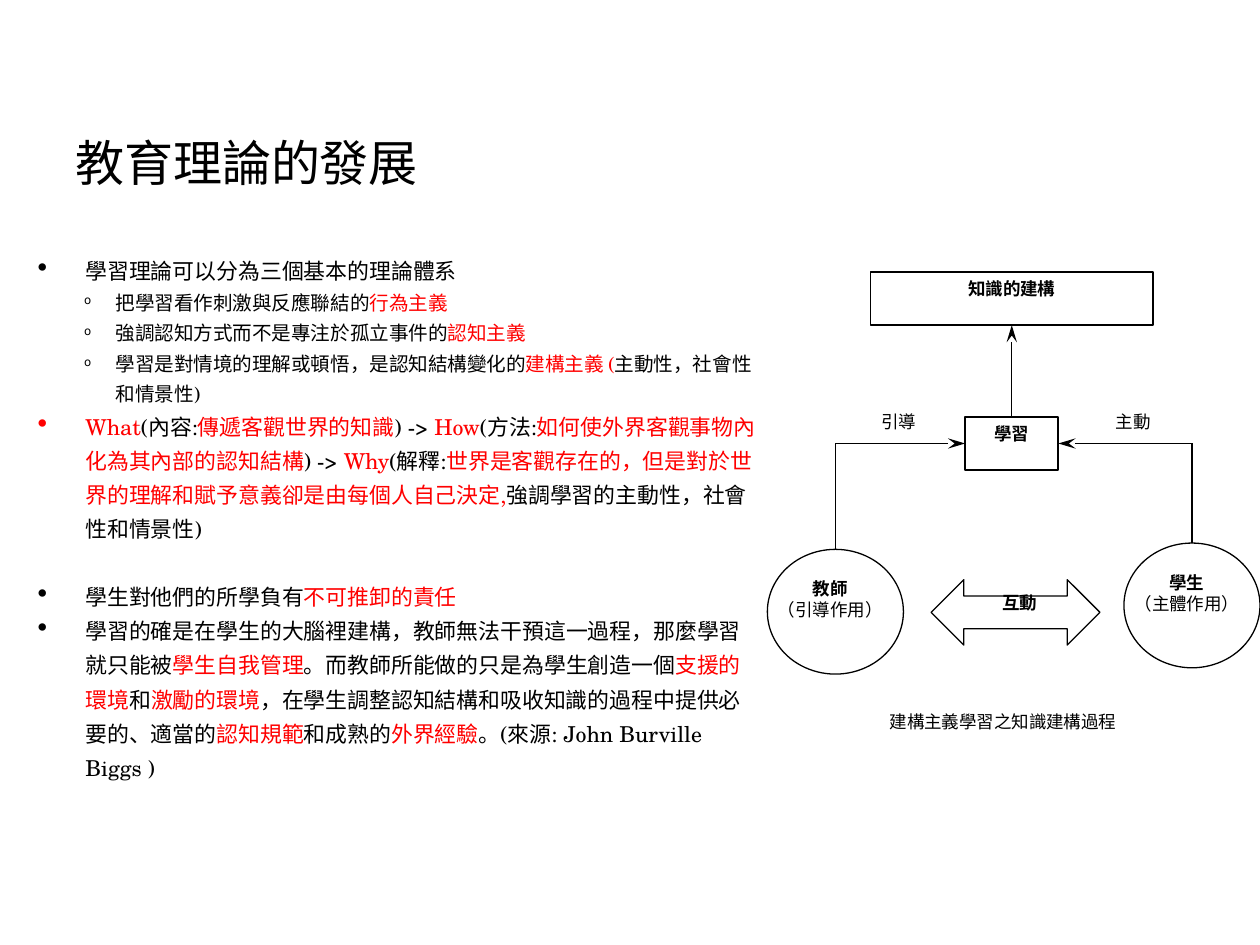
from dataclasses import dataclass

from lxml.etree import SubElement
from pptx import Presentation
from pptx.dml.color import RGBColor
from pptx.enum.shapes import MSO_CONNECTOR, MSO_SHAPE
from pptx.enum.text import MSO_ANCHOR, PP_ALIGN
from pptx.oxml.ns import qn
from pptx.util import Emu, Inches, Pt

COLORS = {"text": "000000", "accent": "FF0000", "fill": "FFFFFF", "line": "000000"}
BODY_FONT, DIAGRAM_FONT = "TeX Gyre Schola", "Calibri"
TOP, LEFT, BOTTOM, RIGHT = range(4)

# Bullet levels: size, left margin, hanging indent, bullet, bullet size
LEVELS = [
    (12.5, 0.38, 0.38, "•", "130000"),
    (11.2, 0.62, 0.25, "o", "60000"),
]

# Level, text (parts between bars are highlighted), space before in points
BULLETS = [
    (0, "學習理論可以分為三個基本的理論體系", 0),
    (1, "把學習看作刺激與反應聯結的|行為主義", 0),
    (1, "強調認知方式而不是專注於孤立事件的|認知主義", 0),
    (1, "學習是對情境的理解或頓悟，是認知結構變化的|建構主義 (|主動性，社會性和情景性)", 0),
    (0, "|What|(內容:|傳遞客觀世界的知識|) -> |How|(方法:|"
        "如何使外界客觀事物內化為其內部的認知結構|) -> |Why|(解釋:|"
        "世界是客觀存在的，但是對於世界的理解和賦予意義卻是由每個人自己決定,|"
        "強調學習的主動性，社會性和情景性)", 0),
    (0, "學生對他們的所學負有|不可推卸的責任", 19.5),
    (0, "學習的確是在學生的大腦裡建構，教師無法干預這一過程，那麼學習就只能被|"
        "學生自我管理|。而教師所能做的只是為學生創造一個|支援的環境|和|激勵的環境|"
        "，在學生調整認知結構和吸收知識的過程中提供必要的、適當的|認知規範|"
        "和成熟的|外界經驗|。(來源: John Burville Biggs )", 0),
]


@dataclass
class Grid:
    """A region of the slide divided into columns and rows."""
    left: int
    top: int
    width: int
    height: int
    columns: int
    rows: int

    def point(self, column, row):
        return (Emu(round(self.left + self.width * column / self.columns)),
                Emu(round(self.top + self.height * row / self.rows)))

    def box(self, column, row, wide, high):
        return (*self.point(column, row),
                Emu(round(self.width * wide / self.columns)),
                Emu(round(self.height * high / self.rows)))


def color(name):
    return RGBColor.from_string(COLORS[name])


def add_run(paragraph, text, font, size, color_name="text", bold=False):
    run = paragraph.add_run()
    run.text = text
    run.font.name, run.font.size, run.font.bold = font, Pt(size), bold
    run.font.color.rgb = color(color_name)


def add_textbox(slide, box, inset=True):
    frame = slide.shapes.add_textbox(*box).text_frame
    frame.word_wrap = True
    if not inset:
        frame.margin_left = frame.margin_right = frame.margin_top = frame.margin_bottom = 0
    return frame


def write_centered(frame, *lines):
    """Write (text, bold) lines, one paragraph each."""
    frame.vertical_anchor = MSO_ANCHOR.TOP
    for index, (text, bold) in enumerate(lines):
        paragraph = frame.add_paragraph() if index else frame.paragraphs[0]
        paragraph.alignment = PP_ALIGN.CENTER
        add_run(paragraph, text, DIAGRAM_FONT, 10, bold=bold)


def add_outlined(slide, kind, box, weight=0.75):
    shape = slide.shapes.add_shape(kind, *box)
    shape.shadow.inherit = False
    shape.fill.solid()
    shape.fill.fore_color.rgb = color("fill")
    shape.line.color.rgb = color("line")
    shape.line.width = Pt(weight)
    return shape


def add_line(slide, start, end, begin=None, finish=None, arrow=False):
    """Draw a line; begin and finish are optional (shape, side) joins."""
    connector = slide.shapes.add_connector(MSO_CONNECTOR.STRAIGHT, *start, *end)
    connector.line.color.rgb = color("line")
    connector.line.width = Pt(0.75)
    if begin:
        connector.begin_connect(*begin)
    if finish:
        connector.end_connect(*finish)
    if arrow:
        SubElement(connector.line._get_or_add_ln(), qn("a:tailEnd"),
                   type="stealth", w="med", len="lg")
    SubElement(connector._element.spPr, qn("a:effectLst"))


def add_title(slide, box):
    paragraph = add_textbox(slide, box).paragraphs[0]
    add_run(paragraph, "教育理論的發展", BODY_FONT, 28)


def add_bullets(slide, box):
    frame = add_textbox(slide, box)
    for index, (level, text, space) in enumerate(BULLETS):
        size, margin, hanging, character, scale = LEVELS[level]
        paragraph = frame.add_paragraph() if index else frame.paragraphs[0]
        paragraph.level = level
        paragraph.line_spacing = 1.3
        paragraph.space_before = Pt(space)
        properties = paragraph._p.get_or_add_pPr()
        properties.set("marL", str(Inches(margin)))
        properties.set("indent", str(-Inches(hanging)))
        SubElement(properties, qn("a:buSzPct"), val=scale)
        SubElement(properties, qn("a:buChar"), char=character)
        for part, words in enumerate(text.split("|")):
            if words:
                add_run(paragraph, words, BODY_FONT, size, "accent" if part % 2 else "text")


def add_diagram(slide, grid):
    # Knowledge and learning boxes
    knowledge = add_outlined(slide, MSO_SHAPE.RECTANGLE, grid.box(9.1, 1.6, 22.4, 4.2), 1)
    write_centered(knowledge.text_frame, ("知識的建構", True))
    learning = add_outlined(slide, MSO_SHAPE.RECTANGLE, grid.box(16.6, 13.1, 7.4, 4.2), 1)
    write_centered(learning.text_frame, ("學習", True))
    add_line(slide, grid.point(20.3, 13.1), grid.point(20.3, 5.8),
             (learning, TOP), (knowledge, BOTTOM), arrow=True)

    # Teacher and student, each leading up and across to learning
    for column, row, name, role, side in [
        (0.9, 23.6, "教師", "（引導作用）", LEFT),
        (29.2, 23.1, "學生", "（主體作用）", RIGHT),
    ]:
        person = add_outlined(slide, MSO_SHAPE.OVAL, grid.box(column, row, 10.8, 9.9))
        label = add_textbox(slide, grid.box(column + 0.2, row + 2.3, 9.6, 4.5), inset=False)
        write_centered(label, (name, True), (role, False))
        corner = grid.point(column + 5.4, 15.2)
        add_line(slide, corner, grid.point(column + 5.4, row), finish=(person, TOP))
        add_line(slide, corner, grid.point(20.3, 15.2), finish=(learning, side), arrow=True)

    # Interaction arrow
    arrow = add_outlined(slide, MSO_SHAPE.LEFT_RIGHT_ARROW, grid.box(13.9, 26, 13.4, 5.2))
    arrow.adjustments[0], arrow.adjustments[1] = 0.5, 0.5

    # Labels and caption
    for text, bold, box, inset in [
        ("互動", True, (16.9, 27, 8.1, 2.7), False),
        ("引導", False, (8.3, 12.6, 6.1, 2.4), False),
        ("主動", False, (27.1, 12.6, 5.7, 2.8), False),
        ("建構主義學習之知識建構過程", False, (0.3, 35.9, 38.6, 4.2), True),
    ]:
        write_centered(add_textbox(slide, grid.box(*box), inset), (text, bold))


def main():
    presentation = Presentation()
    presentation.slide_width, presentation.slide_height = Inches(10), Inches(7.5)
    slide = presentation.slides.add_slide(presentation.slide_layouts[6])
    page = Grid(0, 0, presentation.slide_width, presentation.slide_height, 100, 75)
    add_title(slide, page.box(5, 10, 90, 10))
    add_bullets(slide, page.box(2, 19.3, 59.1, 47))
    add_diagram(slide, Grid(*page.box(60, 20, 40, 40), 40, 40))
    presentation.save("out.pptx")


if __name__ == "__main__":
    main()
